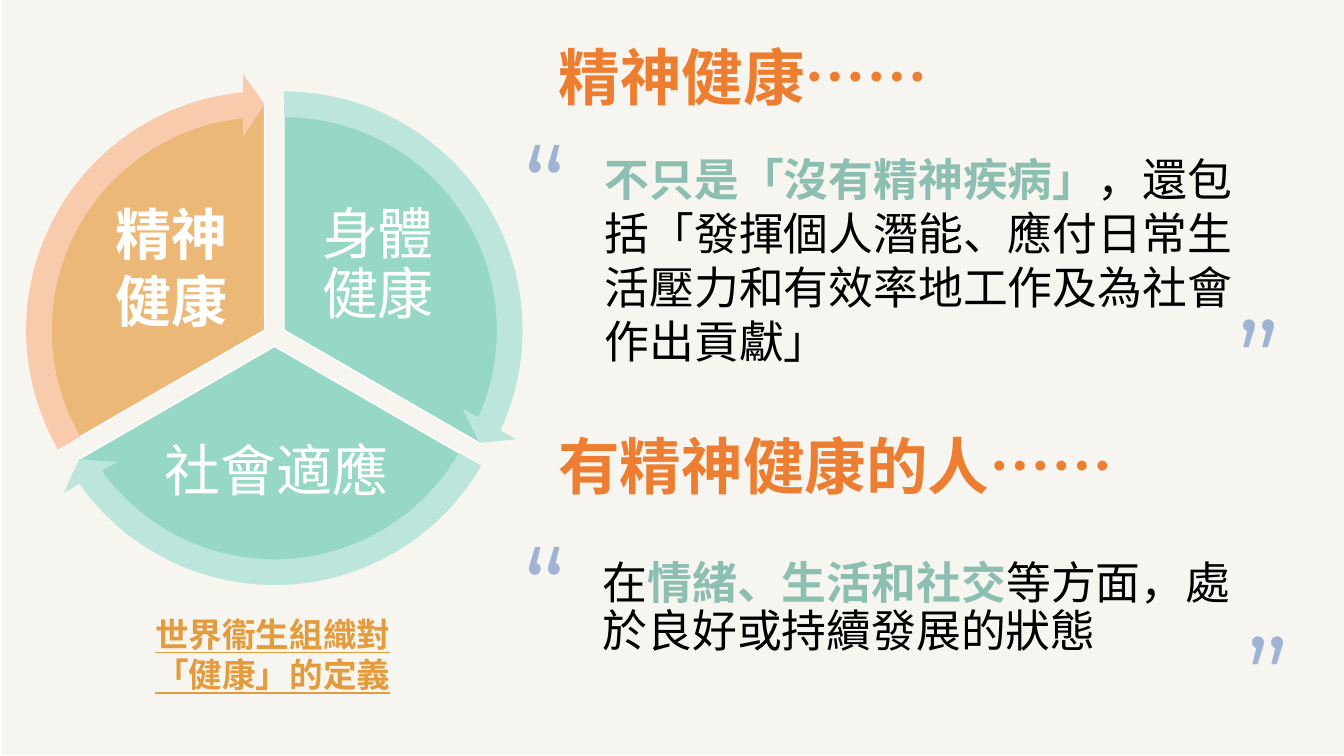
from pptx import Presentation
from pptx.dml.color import RGBColor
from pptx.enum.shapes import MSO_SHAPE
from pptx.enum.text import MSO_ANCHOR, MSO_AUTO_SIZE, PP_ALIGN
from pptx.oxml.ns import qn
from pptx.util import Pt
from lxml.etree import SubElement

CREAM = RGBColor(0xF7, 0xF5, 0xEF)
WHITE = RGBColor(0xFF, 0xFF, 0xFF)
BLACK = RGBColor(0, 0, 0)
ORANGE = RGBColor(0xED, 0x7D, 0x31)
MINT = RGBColor(0x96, 0xD7, 0xC6)
PALE_MINT = RGBColor(0xBC, 0xE6, 0xDB)
SAND = RGBColor(0xEB, 0xB8, 0x77)
PEACH = RGBColor(0xF8, 0xCB, 0xAD)
GOLD = RGBColor(0xE3, 0x9C, 0x3D)
SAGE = RGBColor(0x8C, 0xBE, 0xB1)
BLUE = RGBColor(0x9F, 0xB4, 0xD5)

TC, SC, QUOTE_FONT = "Noto Sans CJK TC", "Noto Sans CJK SC", "Montserrat"

# Content: boxes are (left, top, width, height) in points
HEADING = "精神健康……"
HEADING_BOX = (391.7, 30.2, 568.1, 71.3)
SUBHEADING = "有精神健康的人……"
SUBHEADING_BOX = (391.7, 308.2, 568.1, 71.3)

DEFINITION = [("不只是「沒有精神疾病」", SAGE, True),
              ("，還包括「發揮個人潛能、應付日常生活壓力和有效率地工作及為社會作出貢獻」", BLACK, False)]
DEFINITION_BOX = (424.8, 105.1, 479.5, 162.7)
PERSON = [("在", BLACK, False), ("情緒、生活和社交", SAGE, True),
          ("等方面，處於良好或持續發展的狀態", BLACK, False)]
PERSON_BOX = (423.4, 396.7, 463, 44.6)

CAPTION = ["世界衞生組織對", "「健康」的定義"]
CAPTION_BOX = (103.7, 434.9, 184.3, 65.5)

QUOTES = [("“", (367.2, 79.9, 65.5, 104.4)), ("”", (877, 204.5, 65.5, 104.4)),
          ("”", (883.4, 431.3, 65.5, 104.4)), ("“", (366.5, 366.5, 34.6, 104.4))]

# Wheel sectors: text, bold, line spacing, left, top, start, end, fill, arrow fill, label box
# Angles are in the adjustment unit of the shapes: 216 to a full turn
SECTORS = [
    ("身體健康", False, 0.9, 39.7, 72.7, 162, 18, MINT, PALE_MINT, (211.7, 141.8, 116.6, 97.2)),
    ("社會適應", False, 0.9, 33, 84.3, 18, 90, MINT, PALE_MINT, (110.2, 295.2, 174.2, 85.7)),
    ("精神健康", True, 1, 26, 72.7, 90, 162, SAND, PEACH, (64.1, 141.8, 116.6, 97.2)),
]
SECTOR_SIZE = 326.2
RING = 20.2
ARROW_WIDTH, HEAD_WIDTH, HEAD_ANGLE = 0.05, 0.06, 3.28


def points(box):
    return [Pt(value) for value in box]


def add_run(paragraph, text, size, color, font=TC, bold=False, underline=None):
    run = paragraph.add_run()
    run.text = text
    run.font.size = Pt(size)
    run.font.bold = bold
    run.font.underline = underline
    run.font.color.rgb = color
    run.font.name = font
    SubElement(run.font._element, qn("a:ea"), typeface=font)


def add_frame(shapes, box, auto_size=MSO_AUTO_SIZE.NONE, wrap=True):
    frame = shapes.add_textbox(*points(box)).text_frame
    frame.word_wrap = wrap
    frame.auto_size = auto_size
    return frame


def add_solid(shapes, preset, box, fill, line=None):
    solid = shapes.add_shape(preset, *points(box))
    solid.shadow.inherit = False
    solid.fill.solid()
    solid.fill.fore_color.rgb = fill
    if line is None:
        solid.line.fill.background()
    else:
        solid.line.color.rgb = line
        solid.line.width = Pt(1)
    return solid


def adjust(solid, values):
    for index, value in enumerate(values):
        solid.adjustments[index] = value


def write_heading(frame, text):
    frame.vertical_anchor = MSO_ANCHOR.TOP
    paragraph = frame.paragraphs[0]
    paragraph.alignment = PP_ALIGN.LEFT
    paragraph.line_spacing = 0.9
    paragraph.space_before = Pt(0)
    add_run(paragraph, text, 44, ORANGE, bold=True)


deck = Presentation()
deck.slide_width, deck.slide_height = Pt(960), Pt(540)
slide = deck.slides.add_slide(deck.slide_layouts[5])
shapes = slide.shapes

# Heading over the cream panel
heading = shapes.title
heading.left, heading.top, heading.width, heading.height = points(HEADING_BOX)
heading.text_frame.word_wrap = True
heading.text_frame.auto_size = MSO_AUTO_SIZE.NONE
write_heading(heading.text_frame, HEADING)
panel = add_solid(shapes, MSO_SHAPE.RECTANGLE, (1.4, -0.7, 960, 540), CREAM)
heading.element.addprevious(panel.element)

# Wheel: sectors with labels, then the ring of arrows
wheel = shapes.add_group_shape().shapes
for text, bold, spacing, left, top, start, end, fill, _, label_box in SECTORS:
    sector = add_solid(wheel, MSO_SHAPE.PIE, (left, top, SECTOR_SIZE, SECTOR_SIZE), fill, WHITE)
    adjust(sector, (start, end))
    label = add_frame(wheel, label_box)
    label.vertical_anchor = MSO_ANCHOR.MIDDLE
    label.margin_left = label.margin_right = label.margin_top = label.margin_bottom = Pt(4)
    label.paragraphs[0].alignment = PP_ALIGN.CENTER
    label.paragraphs[0].line_spacing = spacing
    add_run(label.paragraphs[0], text, 40, WHITE, bold=bold)

arrow_size = SECTOR_SIZE + 2 * RING
for _, _, _, left, top, start, end, _, arrow_fill, _ in SECTORS:
    arrow = add_solid(wheel, MSO_SHAPE.CIRCULAR_ARROW,
                      (left - RING, top - RING, arrow_size, arrow_size), arrow_fill)
    adjust(arrow, (ARROW_WIDTH, HEAD_ANGLE, end - HEAD_ANGLE, start, HEAD_WIDTH))

# Caption under the wheel
caption = add_frame(shapes, CAPTION_BOX, MSO_AUTO_SIZE.SHAPE_TO_FIT_TEXT, wrap=False)
for index, line in enumerate(CAPTION):
    paragraph = caption.add_paragraph() if index else caption.paragraphs[0]
    add_run(paragraph, line, 24, GOLD, SC, bold=True, underline=True)

# Quoted statements
for runs, box, spacing, auto_size in [
        (DEFINITION, DEFINITION_BOX, 1, MSO_AUTO_SIZE.SHAPE_TO_FIT_TEXT),
        (PERSON, PERSON_BOX, 0.9, MSO_AUTO_SIZE.NONE)]:
    statement = add_frame(shapes, box, auto_size).paragraphs[0]
    statement.line_spacing = spacing
    for text, color, bold in runs:
        add_run(statement, text, 32, color, bold=bold)

# Quotation marks
for mark, box in QUOTES:
    quote = add_frame(shapes, box, MSO_AUTO_SIZE.SHAPE_TO_FIT_TEXT)
    add_run(quote.paragraphs[0], mark, 80, BLUE, QUOTE_FONT)

# Second heading
write_heading(add_frame(shapes, SUBHEADING_BOX), SUBHEADING)

deck.save("out.pptx")
